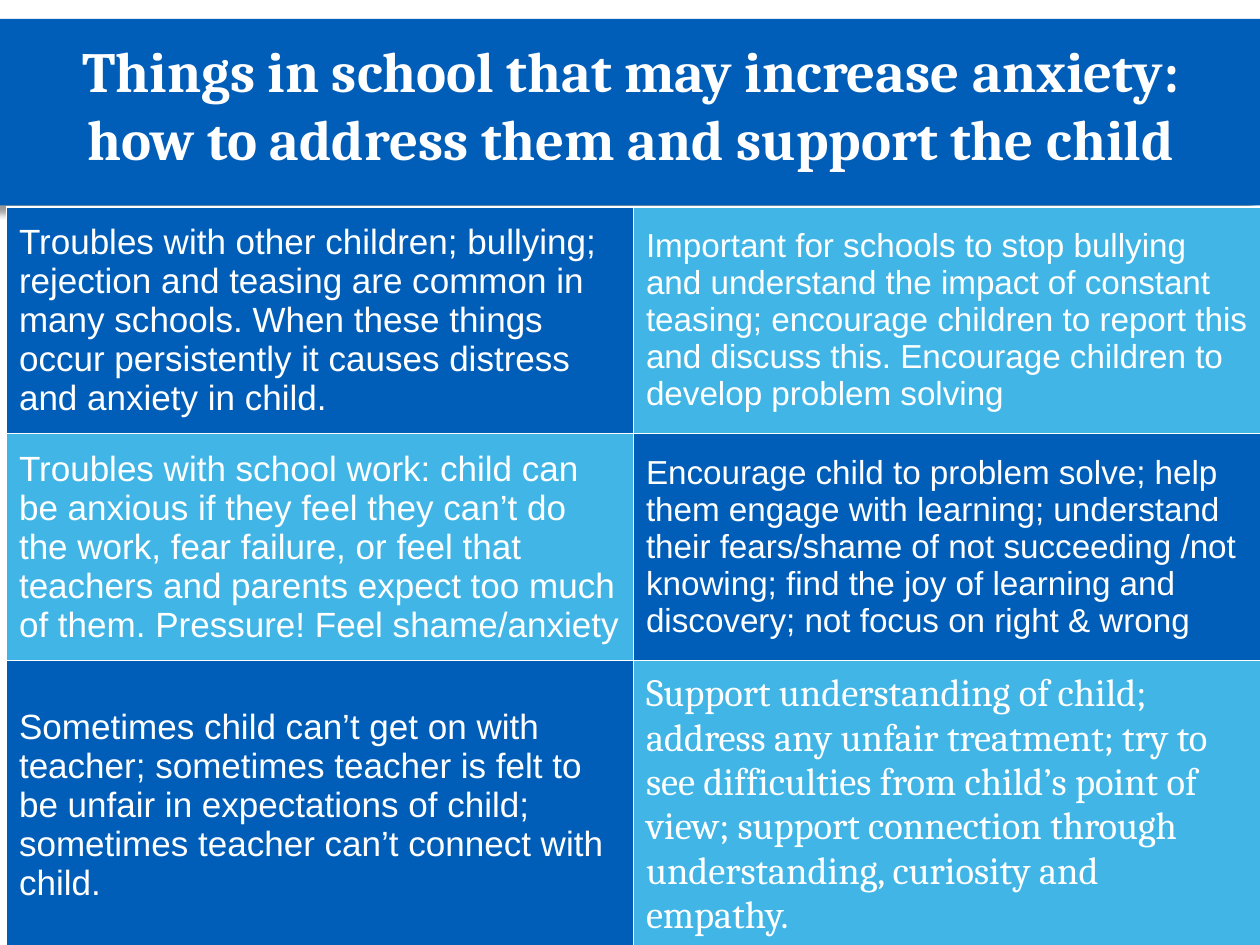
from lxml import etree
from pptx import Presentation
from pptx.dml.color import RGBColor
from pptx.enum import shapes, text
from pptx.oxml import ns
from pptx.util import Cm, Pt

COLOURS = {"deep": "005EB8", "sky": "41B6E6", "white": "FFFFFF", "shadow": "000000"}

TITLE = "Things in school that may increase anxiety: how to address them and support the child"

# Each row: trouble, then response, as (wording, size, font)
ROWS = [
    [("Troubles with other children; bullying; rejection and teasing are common in many "
      "schools. When these things occur persistently it causes distress and anxiety in child.",
      20, "Arial"),
     ("Important for schools to stop bullying and understand the impact of constant teasing; "
      "encourage children to report this and discuss this. Encourage children to develop "
      "problem solving", 19, "Arial")],
    [("Troubles with school work: child can be anxious if they feel they can’t do the work, "
      "fear failure, or feel that teachers and parents expect too much of them. Pressure! "
      "Feel shame/anxiety", 20, "Arial"),
     ("Encourage child to problem solve; help them engage with learning; understand their "
      "fears/shame of not succeeding /not knowing; find the joy of learning and discovery; "
      "not focus on right & wrong", 19, "Arial")],
    [("Sometimes child can’t get on with teacher; sometimes teacher is felt to be unfair in "
      "expectations of child; sometimes teacher can’t connect with child.", 20, "Arial"),
     ("Support understanding of child; address any unfair treatment; try to see difficulties "
      "from child’s point of view; support connection through understanding, curiosity and "
      "empathy.", 22, "Cambria")],
]
ROW_HEIGHTS = [Cm(4.57), Cm(4.57), Cm(5.76)]
COLUMN_WIDTH = Cm(12.64)


def paint(fill, colour):
    fill.solid()
    fill.fore_color.rgb = RGBColor.from_string(COLOURS[colour])


def add_span(para, wording, size, font, bold=False):
    span = para.add_run()
    span.text = wording
    span.font.size = Pt(size)
    span.font.name = font
    span.font.bold = bold
    span.font.color.rgb = RGBColor.from_string(COLOURS["white"])


def add_colour(parent, colour):
    return etree.SubElement(parent, ns.qn("a:srgbClr"), val=COLOURS[colour])


def add_shadow(shape):
    shape.shadow.inherit = False
    effects = shape.element.spPr.find(ns.qn("a:effectLst"))
    shadow = etree.SubElement(effects, ns.qn("a:outerShdw"), blurRad=str(Pt(4)),
                              dist=str(Pt(6)), dir=str(135 * 60000),
                              algn="tr", rotWithShape="0")
    etree.SubElement(add_colour(shadow, "shadow"), ns.qn("a:alpha"), val="40000")


def add_banner(page):
    banner = page.shapes.add_shape(shapes.MSO_SHAPE.RECTANGLE, 0, Cm(0.38), Cm(25.4), Cm(3.76))
    paint(banner.fill, "deep")
    banner.line.fill.background()
    add_shadow(banner)


def add_title(page):
    box = page.shapes.add_textbox(Cm(0.28), Cm(0.69), Cm(24.87), Cm(2.82))
    frame = box.text_frame
    frame.word_wrap = True
    frame.vertical_anchor = text.MSO_ANCHOR.MIDDLE
    para = frame.paragraphs[0]
    para.alignment = text.PP_ALIGN.CENTER
    add_span(para, TITLE, 32.4, "Cambria", bold=True)


def add_borders(cell):
    properties = cell._tc.get_or_add_tcPr()
    for index, side in enumerate(("lnL", "lnR", "lnT", "lnB")):
        line = etree.Element(ns.qn(f"a:{side}"), w=str(Pt(1)))
        add_colour(etree.SubElement(line, ns.qn("a:solidFill")), "white")
        properties.insert(index, line)


def add_advice_table(page):
    table = page.shapes.add_table(len(ROWS), 2, Cm(0.13), Cm(4.17),
                                  2 * COLUMN_WIDTH, sum(ROW_HEIGHTS)).table
    for column in table.columns:
        column.width = COLUMN_WIDTH
    for r, entries in enumerate(ROWS):
        table.rows[r].height = ROW_HEIGHTS[r]
        for c, (wording, size, font) in enumerate(entries):
            cell = table.cell(r, c)
            # Checkerboard of the two blues
            paint(cell.fill, "sky" if (r + c) % 2 else "deep")
            add_borders(cell)
            cell.vertical_anchor = text.MSO_ANCHOR.MIDDLE
            add_span(cell.text_frame.paragraphs[0], wording, size, font)


def main():
    deck = Presentation()
    deck.slide_width, deck.slide_height = Cm(25.4), Cm(19.05)
    page = deck.slides.add_slide(deck.slide_layouts[6])

    # Heading
    add_banner(page)
    add_title(page)

    # Troubles and responses
    add_advice_table(page)

    deck.save("out.pptx")


if __name__ == "__main__":
    main()
